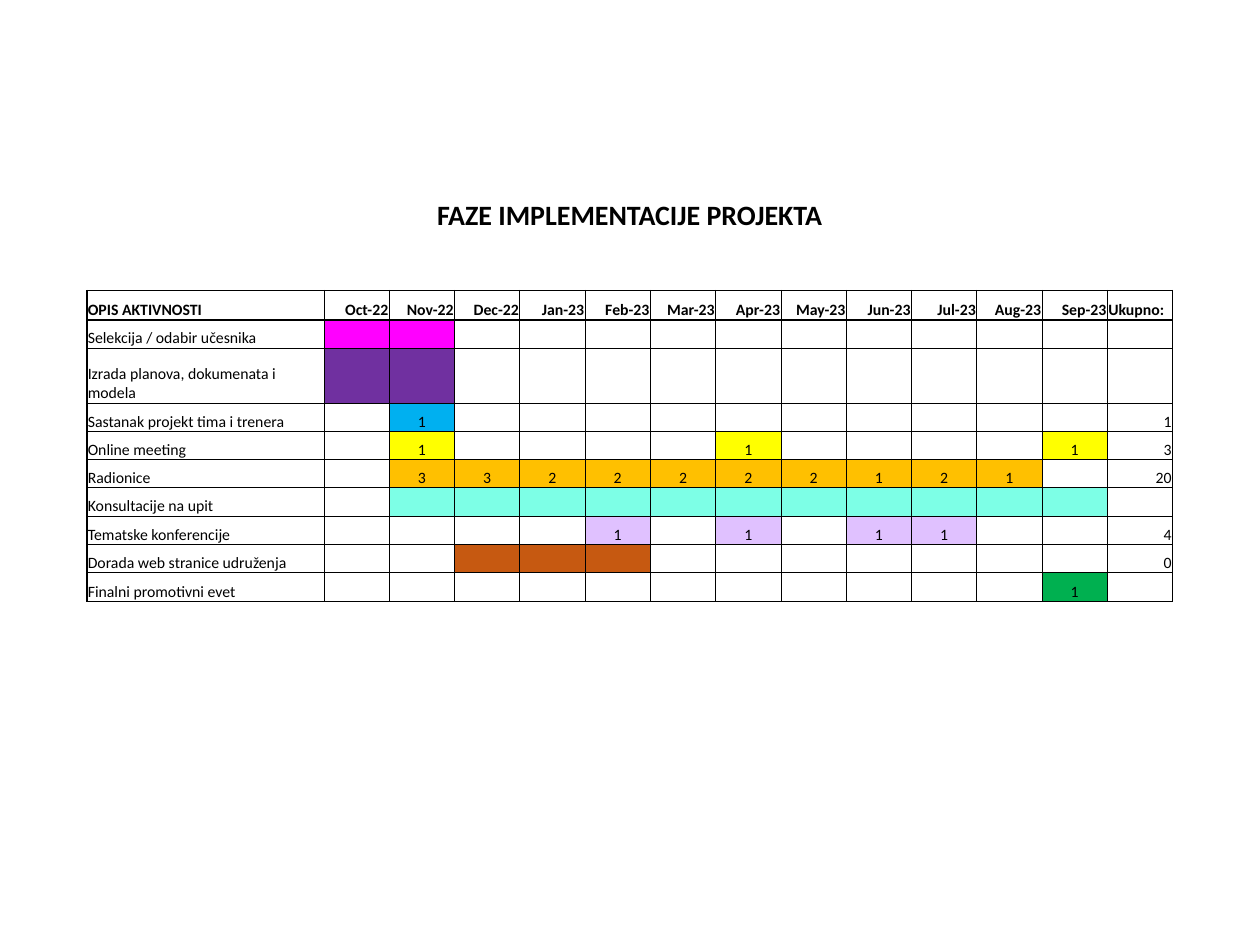
from dataclasses import dataclass

from lxml import etree
from pptx import Presentation
from pptx.dml.color import RGBColor
from pptx.enum.text import MSO_ANCHOR, PP_ALIGN
from pptx.oxml.ns import qn
from pptx.util import Cm, Pt

LEFT, CENTER, RIGHT = PP_ALIGN.LEFT, PP_ALIGN.CENTER, PP_ALIGN.RIGHT
BOTTOM = MSO_ANCHOR.BOTTOM
FONT = "Calibri"
THIN, THICK = 0.5, 1

COLORS = {
    "ink": "000000",
    "selection": "FF00FF",
    "planning": "7030A0",
    "team": "00B0F0",
    "online": "FFFF00",
    "workshops": "FFC000",
    "consulting": "7DFFE6",
    "conferences": "E0C1FF",
    "web": "C65911",
    "final": "00B050",
}

MONTHS = ["Oct-22", "Nov-22", "Dec-22", "Jan-23", "Feb-23", "Mar-23",
          "Apr-23", "May-23", "Jun-23", "Jul-23", "Aug-23", "Sep-23"]


@dataclass
class Activity:
    label: str
    color: str
    counts: dict[int, str]  # month number (1 = Oct-22) -> text in the cell
    total: str = ""


def span(first: int, last: int) -> dict[int, str]:
    """Months that are coloured but carry no number."""
    return dict.fromkeys(range(first, last + 1), "")


ACTIVITIES = [
    Activity("Selekcija / odabir učesnika", "selection", span(1, 2)),
    Activity("Izrada planova, dokumenata i modela", "planning", span(1, 2)),
    Activity("Sastanak projekt tima i trenera", "team", {2: "1"}, "1"),
    Activity("Online meeting", "online", {2: "1", 7: "1", 12: "1"}, "3"),
    Activity("Radionice", "workshops", dict(enumerate("3322222121", 2)), "20"),
    Activity("Konsultacije na upit", "consulting", span(2, 12)),
    Activity("Tematske konferencije", "conferences",
             {5: "1", 7: "1", 9: "1", 10: "1"}, "4"),
    Activity("Dorada web stranice udruženja", "web", span(3, 5), "0"),
    Activity("Finalni promotivni evet", "final", {12: "1"}),
]

# Grid, in centimetres
TABLE_LEFT, TABLE_TOP, TABLE_WIDTH = 1.75, 3.68, 21.89
LABEL_WIDTH = 4.78
ROW_HEIGHTS = [1.02, 0.57, 0.59, 0.59, 0.57, 1.11] + [0.57] * 6 + [0.58]
HEADER_ROW = 3
FIRST_ACTIVITY = HEADER_ROW + 1
LAST_ROW = len(ROW_HEIGHTS) - 1
TOTAL_COL = len(MONTHS) + 1
COLUMNS = TOTAL_COL + 1


def set_borders(cell, widths: dict[str, float]) -> None:
    """Draw the given sides; a width of 0 leaves the side empty."""
    tc_pr = cell._tc.get_or_add_tcPr()
    for side, width in widths.items():
        ln = etree.SubElement(tc_pr, qn(f"a:ln{side}"), w=str(Pt(width)))
        if width:
            fill = etree.SubElement(ln, qn("a:solidFill"))
            etree.SubElement(fill, qn("a:srgbClr"), val=COLORS["ink"])
        else:
            etree.SubElement(ln, qn("a:noFill"))


def border_widths(row: int, col: int) -> dict[str, float]:
    if row < HEADER_ROW:
        bottom = THICK if row == HEADER_ROW - 1 else 0
        return {"L": 0, "R": 0, "T": 0, "B": bottom}
    return {
        "L": THICK if col == 0 else THIN,
        "R": THICK if col == TOTAL_COL else THIN,
        "T": THICK if row <= FIRST_ACTIVITY else THIN,
        "B": THICK if row in (HEADER_ROW, LAST_ROW) else THIN,
    }


def prepare_cell(cell, row: int, col: int) -> None:
    cell.margin_left = cell.margin_right = cell.margin_top = Cm(0.02)
    cell.margin_bottom = 0
    cell.vertical_anchor = BOTTOM
    set_borders(cell, border_widths(row, col))
    cell.fill.background()
    # Keeps empty cells from stretching their row
    etree.SubElement(cell.text_frame.paragraphs[0]._p, qn("a:endParaRPr"), sz="900")


def write(cell, text: str, align=LEFT, size: float = 9, bold: bool = False) -> None:
    if not text:
        return
    p = cell.text_frame.paragraphs[0]
    p.alignment = align
    r = p.add_run()
    r.text = text
    r.font.name = FONT
    r.font.size = Pt(size)
    r.font.bold = bold
    r.font.color.rgb = RGBColor.from_string(COLORS["ink"])


def draw_activity(table, row: int, activity: Activity) -> None:
    write(table.cell(row, 0), activity.label)
    for month, count in activity.counts.items():
        cell = table.cell(row, month)
        cell.fill.solid()
        cell.fill.fore_color.rgb = RGBColor.from_string(COLORS[activity.color])
        write(cell, count, CENTER)
    write(table.cell(row, TOTAL_COL), activity.total, RIGHT)


def main() -> None:
    prs = Presentation()
    prs.slide_width, prs.slide_height = Cm(25.4), Cm(19.05)
    s = prs.slides.add_slide(prs.slide_layouts[6])

    # Empty grid
    table = s.shapes.add_table(
        len(ROW_HEIGHTS), COLUMNS, Cm(TABLE_LEFT), Cm(TABLE_TOP),
        Cm(TABLE_WIDTH), Cm(sum(ROW_HEIGHTS))).table
    table.first_row = table.horz_banding = False
    month_width = (TABLE_WIDTH - LABEL_WIDTH) / (COLUMNS - 1)
    for col, column in enumerate(table.columns):
        column.width = Cm(month_width if col else LABEL_WIDTH)
    for row, height in enumerate(ROW_HEIGHTS):
        table.rows[row].height = Cm(height)
        for col in range(COLUMNS):
            prepare_cell(table.cell(row, col), row, col)

    # Title across the top row
    title = table.cell(0, 0)
    title.merge(table.cell(0, TOTAL_COL))
    write(title, "FAZE IMPLEMENTACIJE PROJEKTA", CENTER, 16, True)

    # Header row
    write(table.cell(HEADER_ROW, 0), "OPIS AKTIVNOSTI", bold=True)
    for col, month in enumerate(MONTHS, 1):
        write(table.cell(HEADER_ROW, col), month, RIGHT, bold=True)
    write(table.cell(HEADER_ROW, TOTAL_COL), "Ukupno:", bold=True)

    # Activities
    for row, activity in enumerate(ACTIVITIES, FIRST_ACTIVITY):
        draw_activity(table, row, activity)

    prs.save("out.pptx")


if __name__ == "__main__":
    main()
